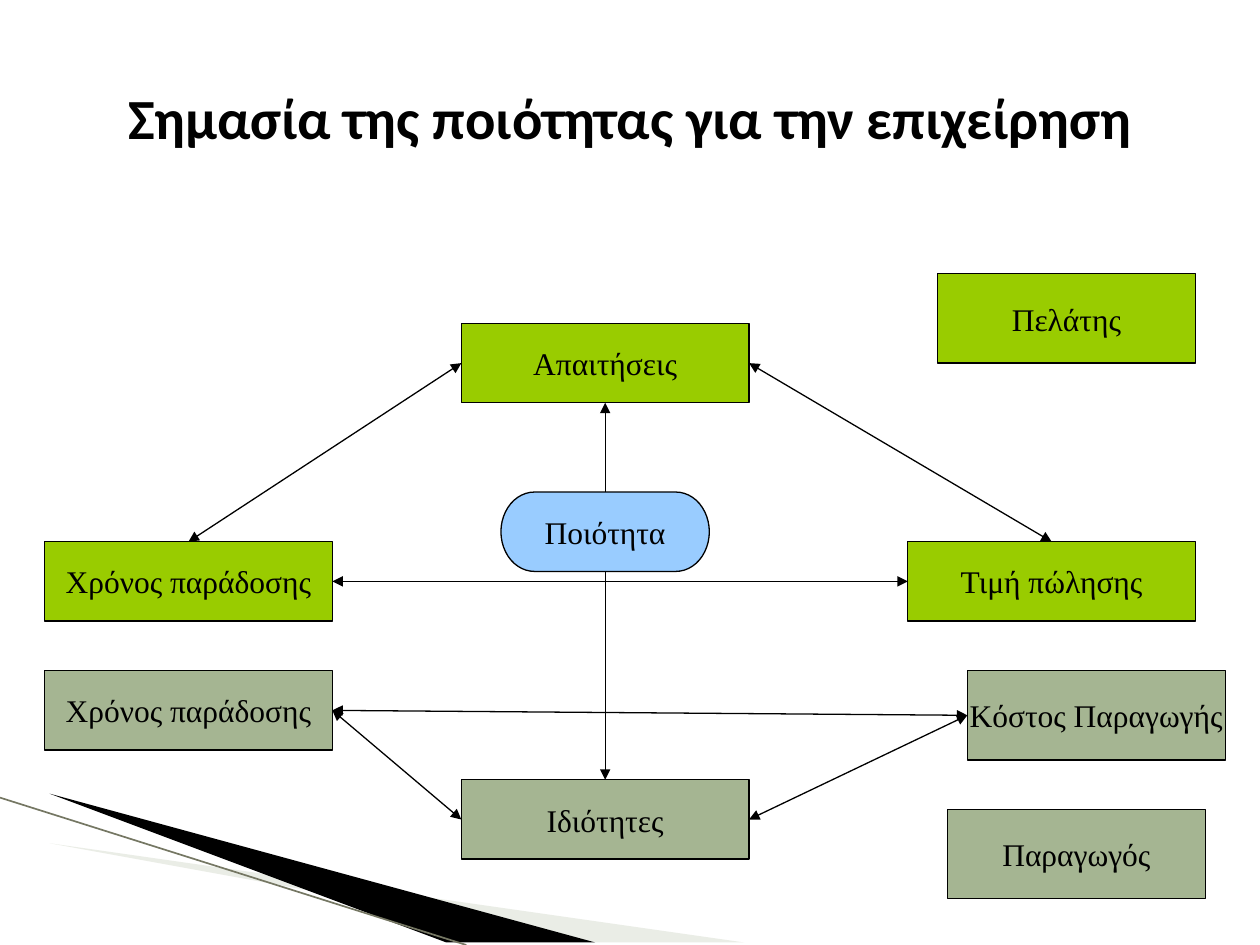
from pptx import Presentation
from pptx.dml.color import RGBColor
from pptx.enum.shapes import MSO_CONNECTOR, MSO_SHAPE
from pptx.enum.text import MSO_ANCHOR, PP_ALIGN
from pptx.oxml.ns import qn
from pptx.util import Cm, Pt
from lxml import etree

STRAIGHT = MSO_CONNECTOR.STRAIGHT
PROCESS = MSO_SHAPE.FLOWCHART_PROCESS
TERMINATOR = MSO_SHAPE.FLOWCHART_TERMINATOR
RECTANGLE = MSO_SHAPE.RECTANGLE
MIDDLE = MSO_ANCHOR.MIDDLE
CENTER = PP_ALIGN.CENTER

BLACK = RGBColor(0x00, 0x00, 0x00)
BLUE = RGBColor(0x99, 0xCC, 0xFF)
GREEN = RGBColor(0x99, 0xCC, 0x00)
SAGE = RGBColor(0xA5, 0xB5, 0x92)
PALE = RGBColor(0xEA, 0xED, 0xE6)
OLIVE = RGBColor(0x75, 0x77, 0x63)

TITLE = "Σημασία της ποιότητας για την επιχείρηση"

# Lengths in cm
SIZES = {PROCESS: (5.8, 1.6), TERMINATOR: (4.2, 1.6), RECTANGLE: (5.2, 1.8)}
BOXES = {  # key: text, kind, fill, left, top
    "quality": ("Ποιότητα", TERMINATOR, BLUE, 10.1, 9.92),
    "customer time": ("Χρόνος παράδοσης", PROCESS, GREEN, 0.9, 10.92),
    "price": ("Τιμή πώλησης", PROCESS, GREEN, 18.3, 10.92),
    "demands": ("Απαιτήσεις", PROCESS, GREEN, 9.3, 6.52),
    "customer": ("Πελάτης", RECTANGLE, GREEN, 18.9, 5.52),
    "producer": ("Παραγωγός", RECTANGLE, SAGE, 19.1, 16.32),
    "properties": ("Ιδιότητες", PROCESS, SAGE, 9.3, 15.72),
    "producer time": ("Χρόνος παράδοσης", PROCESS, SAGE, 0.9, 13.52),
    "cost": ("Κόστος Παραγωγής", RECTANGLE, SAGE, 19.5, 13.52),
}

TOP, LEFT, BOTTOM, RIGHT = range(4)  # connection sites
LINKS = [  # from, site, to, site, arrowhead at both ends
    ("customer time", TOP, "demands", LEFT, True),
    ("demands", RIGHT, "price", TOP, True),
    ("quality", TOP, "demands", BOTTOM, False),
    ("quality", BOTTOM, "properties", TOP, False),
    ("producer time", RIGHT, "properties", LEFT, True),
    ("properties", RIGHT, "cost", LEFT, True),
    ("customer time", RIGHT, "price", LEFT, True),
    ("producer time", RIGHT, "cost", LEFT, True),
]

WEDGES = [
    (PALE, [(1.4, 16.52), (14.98, 19.05), (11.5, 19.05)]),
    (BLACK, [(1.35, 16.48), (11.5, 19.05), (9.4, 19.05)]),
]
EDGE = [(0, 16.08), (9.4, 19.05)]


def write(shape, text, font_name, size, bold=False):
    frame = shape.text_frame
    frame.text = text
    frame.vertical_anchor = MIDDLE
    paragraph = frame.paragraphs[0]
    paragraph.alignment = CENTER
    font = paragraph.runs[0].font
    font.name, font.size, font.bold = font_name, Pt(size), bold
    font.color.rgb = BLACK
    return frame


def add_line(shapes, start, end, color, width):
    line = shapes.add_connector(STRAIGHT, *(Cm(v) for v in (*start, *end)))
    line.line.color.rgb = color
    line.line.width = Pt(width)
    etree.SubElement(line._element.spPr, qn("a:effectLst"))
    return line


def add_wedge(shapes, color, points):
    builder = shapes.build_freeform(*points[0], scale=Cm(1))
    builder.add_line_segments(points[1:], close=True)
    wedge = builder.convert_to_shape()
    wedge.shadow.inherit = False
    wedge.fill.solid()
    wedge.fill.fore_color.rgb = color
    wedge.line.fill.background()


def add_box(shapes, text, kind, color, left, top):
    box = shapes.add_shape(kind, *(Cm(v) for v in (left, top, *SIZES[kind])))
    box.shadow.inherit = False
    box.fill.solid()
    box.fill.fore_color.rgb = color
    box.line.color.rgb = BLACK
    box.line.width = Pt(0.75)
    write(box, text, "Times New Roman", 18).word_wrap = False
    return box


def link(shapes, start, start_site, end, end_site, both_ends):
    arrow = add_line(shapes, (0, 0), (0, 0), BLACK, 0.75)
    arrow.begin_connect(start, start_site)
    arrow.end_connect(end, end_site)
    for tag in ("a:headEnd", "a:tailEnd") if both_ends else ("a:tailEnd",):
        etree.SubElement(arrow.line._get_or_add_ln(), qn(tag), type="triangle")


def main():
    deck = Presentation()
    deck.slide_width, deck.slide_height = Cm(25.4), Cm(19.05)
    shapes = deck.slides.add_slide(deck.slide_layouts[6]).shapes

    for color, points in WEDGES:
        add_wedge(shapes, color, points)
    add_line(shapes, *EDGE, OLIVE, 0.95)

    title = shapes.add_textbox(Cm(1.27), Cm(0.76), Cm(22.86), Cm(3.18))
    write(title, TITLE, "Calibri", 32.4, bold=True).word_wrap = True

    boxes = {key: add_box(shapes, *box) for key, box in BOXES.items()}
    for start, start_site, end, end_site, both_ends in LINKS:
        link(shapes, boxes[start], start_site, boxes[end], end_site, both_ends)

    deck.save("out.pptx")


if __name__ == "__main__":
    main()
